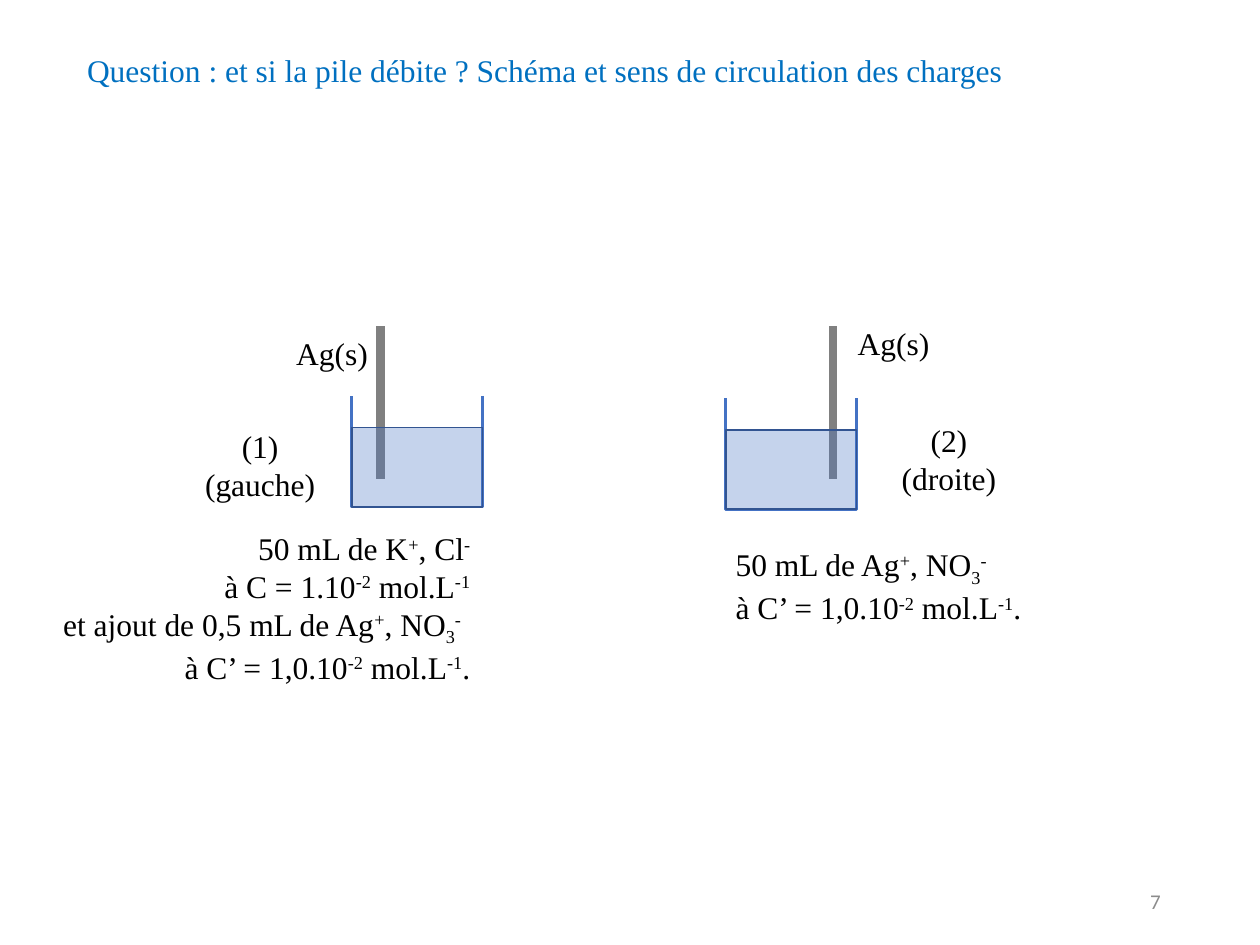
import dataclasses
import typing

import lxml.etree
import pptx
import pptx.dml.color
import pptx.enum.dml
import pptx.enum.shapes
import pptx.enum.text
import pptx.oxml.ns
import pptx.util

Cm = pptx.util.Cm
Pt = pptx.util.Pt
ALIGN = pptx.enum.text.PP_ALIGN
ANCHOR = pptx.enum.text.MSO_ANCHOR
SHAPE = pptx.enum.shapes.MSO_SHAPE
COLOURS = {
    "title": "0070C0", "text": "000000", "number": "8C8C8C",
    "glass": "4472C4", "edge": "325491", "electrode": "808080",
}
SERIF = "Times New Roman"
BEAKER_WIDTH, BEAKER_HEIGHT, LIQUID_HEIGHT = 2.64, 2.24, 1.6
ELECTRODE_TOP, ELECTRODE_BOTTOM = 6.58, 9.65
BASELINES = {"^": "30000", "_": "-25000"}


@dataclasses.dataclass
class Label:
    """Box in cm; in a line, | parts the spans, ^ raises one and _ lowers it."""
    left: float
    top: float
    width: float
    height: float
    lines: typing.List[str]
    align: typing.Any = ALIGN.LEFT


@dataclasses.dataclass
class HalfCell:
    left: float
    top: float
    electrode_x: float
    labels: typing.List[Label]


HALF_CELLS = [
    HalfCell(7.09, 7.98, 7.67, [
        Label(5.72, 6.6, 1.98, 1.02, ["Ag(s)"]),
        Label(0.76, 10.54, 8.97, 3.33, [
            "50 mL de K|^+|, Cl|^-",
            "à C = 1.10|^-2| mol.L|^-1",
            "et ajout de 0,5 mL de Ag|^+|, NO|_3|^-  ",
            "à C’ = 1,0.10|^-2| mol.L|^-1|.",
        ], ALIGN.RIGHT),
        Label(3.86, 8.48, 2.77, 1.8, ["(1)", "(gauche)"], ALIGN.CENTER),
    ]),
    HalfCell(14.63, 8.03, 16.79, [
        Label(17.04, 6.4, 1.98, 1.02, ["Ag(s)"]),
        Label(14.58, 10.87, 6.43, 1.8, [
            "50 mL de Ag|^+|, NO|_3|^-",
            "à C’ = 1,0.10|^-2| mol.L|^-1|.",
        ]),
        Label(17.91, 8.36, 2.44, 1.8, ["(2)", "(droite)"], ALIGN.CENTER),
    ]),
]


def colour(name: str) -> pptx.dml.color.RGBColor:
    return pptx.dml.color.RGBColor.from_string(COLOURS[name])


def style_font(font, size: float, family: str, name: str) -> None:
    font.size = Pt(size)
    font.name = family
    font.color.rgb = colour(name)


def style_line(line, name: str, width: float) -> None:
    line.color.rgb = colour(name)
    line.width = Pt(width)


def add_label(page, label: Label):
    box = page.shapes.add_textbox(
        Cm(label.left), Cm(label.top), Cm(label.width), Cm(label.height))
    frame = box.text_frame
    frame.word_wrap = False
    frame.text = "\n".join(line.split("|")[0] for line in label.lines)
    for para, line in zip(frame.paragraphs, label.lines):
        para.alignment = label.align
        for part in line.split("|")[1:]:
            span = para.add_run()
            span.text = part.lstrip("^_")
            if part[0] in BASELINES:
                span.font._element.set("baseline", BASELINES[part[0]])
        for span in para.runs:
            style_font(span.font, 18, SERIF, "text")
    return box


def add_beaker(page, cell: HalfCell) -> None:
    """Draw the open glass as a bracket turned a quarter, so its sides swap."""
    shift = (BEAKER_WIDTH - BEAKER_HEIGHT) / 2
    glass = page.shapes.add_shape(
        SHAPE.RIGHT_BRACKET, Cm(cell.left + shift), Cm(cell.top - shift),
        Cm(BEAKER_HEIGHT), Cm(BEAKER_WIDTH))
    glass.rotation = 90
    glass.adjustments[0] = 0
    glass.shadow.inherit = False
    glass.fill.background()
    style_line(glass.line, "glass", 1.5)


def add_electrode(page, x: float) -> None:
    rod = page.shapes.add_connector(
        pptx.enum.shapes.MSO_CONNECTOR.STRAIGHT,
        Cm(x), Cm(ELECTRODE_TOP), Cm(x), Cm(ELECTRODE_BOTTOM))
    style_line(rod.line, "electrode", 5)
    lxml.etree.SubElement(
        rod._element.spPr, pptx.oxml.ns.qn("a:effectLst"))


def add_liquid(page, cell: HalfCell) -> None:
    liquid = page.shapes.add_shape(
        SHAPE.RECTANGLE, Cm(cell.left),
        Cm(cell.top + BEAKER_HEIGHT - LIQUID_HEIGHT),
        Cm(BEAKER_WIDTH), Cm(LIQUID_HEIGHT))
    liquid.shadow.inherit = False
    liquid.fill.solid()
    liquid.fill.fore_color.rgb = colour("glass")
    fill = liquid._element.spPr.find(
        pptx.oxml.ns.qn("a:solidFill"))
    lxml.etree.SubElement(
        fill[0], pptx.oxml.ns.qn("a:alpha"), val="31000")
    style_line(liquid.line, "edge", 1)


def format_title(title) -> None:
    title.left, title.top = Cm(1.5), Cm(0.91)
    title.width, title.height = Cm(21.44), Cm(1.02)
    frame = title.text_frame
    frame.text = ("Question : et si la pile débite ? "
                  "Schéma et sens de circulation des charges")
    frame.auto_size = pptx.enum.text.MSO_AUTO_SIZE.NONE
    frame.word_wrap = True
    frame.vertical_anchor = ANCHOR.TOP
    para = frame.paragraphs[0]
    para.alignment = ALIGN.LEFT
    style_font(para.runs[0].font, 18, SERIF, "title")


def add_page_number(page) -> None:
    box = add_label(page, Label(17.93, 17.65, 5.72, 1.02, ["7"], ALIGN.RIGHT))
    box.text_frame.word_wrap = True
    box.text_frame.vertical_anchor = ANCHOR.MIDDLE
    style_font(box.text_frame.paragraphs[0].runs[0].font,
               12, "Calibri", "number")


def main() -> None:
    deck = pptx.Presentation()
    deck.slide_width, deck.slide_height = Cm(25.4), Cm(19.05)
    page = deck.slides.add_slide(deck.slide_layouts[5])
    format_title(page.shapes.title)
    for cell in HALF_CELLS:
        add_beaker(page, cell)
        add_electrode(page, cell.electrode_x)
        add_liquid(page, cell)
        for label in cell.labels:
            add_label(page, label)
    add_page_number(page)
    deck.save("out.pptx")


if __name__ == "__main__":
    main()
